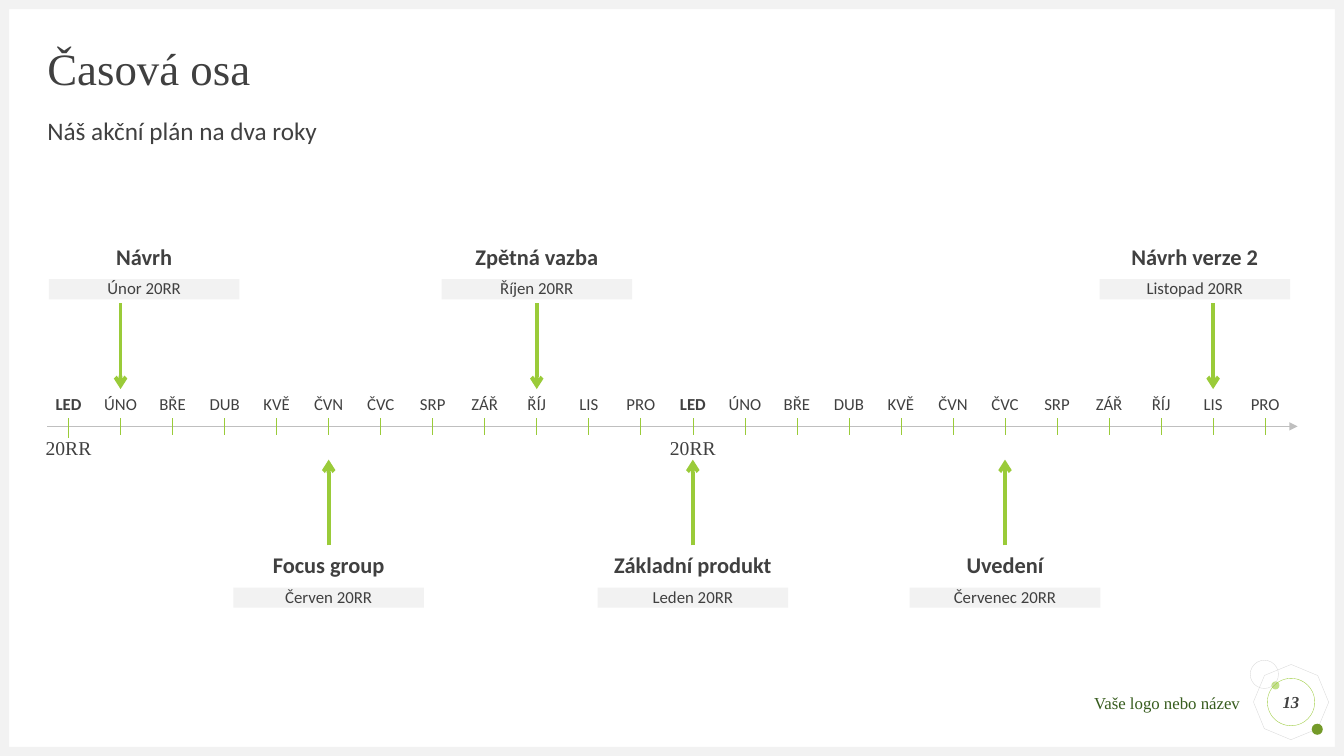
from pptx import Presentation
from pptx.dml.color import RGBColor
from pptx.enum.shapes import MSO_CONNECTOR, MSO_SHAPE
from pptx.enum.text import MSO_ANCHOR, PP_ALIGN
from pptx.oxml.ns import qn
from pptx.util import Inches, Pt
from lxml import etree

HEADING = "Časová osa"
SUBTITLE = "Náš akční plán na dva roky"
FOOTER = "Vaše logo nebo název"
PAGE_NUMBER = "13"
YEARS = ["20RR", "20RR"]
MONTHS = ["LED", "ÚNO", "BŘE", "DUB", "KVĚ", "ČVN",
          "ČVC", "SRP", "ZÁŘ", "ŘÍJ", "LIS", "PRO"]
# month index counted from the first January
MILESTONES = [
    (1, "Návrh", "Únor 20RR", "above"),
    (5, "Focus group", "Červen 20RR", "below"),
    (9, "Zpětná vazba", "Říjen 20RR", "above"),
    (12, "Základní produkt", "Leden 20RR", "below"),
    (18, "Uvedení", "Červenec 20RR", "below"),
    (22, "Návrh verze 2", "Listopad 20RR", "above"),
]
THEME = {
    "text": "404040", "footer": "375C1E", "accent": "9ACB39",
    "accent_light": "C2E088", "accent_dark": "749A29",
    "band": "F2F2F2", "outline": "D9D9D9", "axis": "BFBFBF",
    "serif": "Times New Roman", "sans": "Calibri",
    "heading": 32, "subtitle": 18, "milestone": 16, "year": 14, "small": 12,
}
SLIDE_W, SLIDE_H = 13.33, 7.5
BORDER = 0.09
MARGIN_LEFT, MARGIN_RIGHT = 0.47, 12.87
CONTENT_W = MARGIN_RIGHT - MARGIN_LEFT
AXIS_Y, TICK_TOP = 4.23, 4.15
FIRST_TICK, MONTH_STEP = 0.68, 0.516
MONTH_W, YEAR_W, NAME_W, DATE_W = 0.55, 0.6, 1.96, 1.89
FIRST_CENTER, LAST_CENTER = 1.43, 11.85
SIDES = {
    "above": {"name_top": 2.4, "arrow": (3.01, 3.86)},
    "below": {"name_top": 5.46, "arrow": (5.41, 4.56)},
}
DATE_OFFSET = 0.37


def color(name):
    return RGBColor.from_string(THEME[name])


def write(shape, text, size, font="sans", ink="text", align=PP_ALIGN.CENTER,
          anchor=MSO_ANCHOR.TOP, bold=False, italic=False, inset_top=0, spacing=0.9):
    frame = shape.text_frame
    frame.word_wrap = True
    frame.vertical_anchor = anchor
    frame.margin_left = frame.margin_right = frame.margin_bottom = 0
    frame.margin_top = Inches(inset_top)
    frame.text = text
    paragraph = frame.paragraphs[0]
    paragraph.alignment = align
    paragraph.line_spacing = spacing
    run_font = paragraph.runs[0].font
    run_font.name = THEME[font]
    run_font.size = Pt(THEME[size])
    run_font.bold = bold
    run_font.italic = italic
    run_font.color.rgb = color(ink)


def add_text(slide, at, text, size, **style):
    box = slide.shapes.add_textbox(*map(Inches, at))
    write(box, text, size, **style)


def add_figure(slide, kind, at, fill=None, line=None):
    figure = slide.shapes.add_shape(kind, *map(Inches, at))
    figure.shadow.inherit = False
    if fill:
        figure.fill.solid()
        figure.fill.fore_color.rgb = color(fill)
    else:
        figure.fill.background()
    if line:
        figure.line.color.rgb = color(line)
        figure.line.width = Pt(0.25)
    else:
        figure.line.fill.background()
    return figure


def add_line(slide, start, end, ink, width, head=None):
    line = slide.shapes.add_connector(
        MSO_CONNECTOR.STRAIGHT, *map(Inches, start + end))
    line.line.color.rgb = color(ink)
    line.line.width = Pt(width)
    if head:
        etree.SubElement(line.line._get_or_add_ln(), qn("a:tailEnd"), type=head)
    etree.SubElement(line._element.spPr, qn("a:effectLst"))


def tick_x(month):
    return FIRST_TICK + month * MONTH_STEP


def add_frame(slide):
    octagon = add_figure(slide, MSO_SHAPE.OCTAGON, (12.46, 6.62, 0.69, 0.69), line="outline")
    octagon.rotation = 22.7
    add_figure(slide, MSO_SHAPE.OVAL, (12.61, 6.76, 0.08, 0.08), fill="accent_light")
    add_figure(slide, MSO_SHAPE.OVAL, (13.01, 7.18, 0.11, 0.11), fill="accent_dark")
    add_figure(slide, MSO_SHAPE.OVAL, (12.4, 6.55, 0.28, 0.28), line="outline")
    for edge in [(0, SLIDE_H - BORDER, SLIDE_W, BORDER), (0, 0, SLIDE_W, BORDER),
                 (0, 0, BORDER, SLIDE_H), (SLIDE_W - BORDER, 0, BORDER, SLIDE_H)]:
        add_figure(slide, MSO_SHAPE.RECTANGLE, edge, fill="band")
    add_text(slide, (9.55, 6.87, 2.75, 0.2), FOOTER, "small", font="serif",
             ink="footer", align=PP_ALIGN.RIGHT, spacing=1.0)
    badge = add_figure(slide, MSO_SHAPE.OVAL, (12.57, 6.73, 0.47, 0.47), line="accent")
    write(badge, PAGE_NUMBER, "small", font="serif", anchor=MSO_ANCHOR.MIDDLE,
          bold=True, italic=True, spacing=1.0)


def add_axis(slide):
    add_line(slide, (MARGIN_LEFT, AXIS_Y), (MARGIN_RIGHT, AXIS_Y), "axis", 0.5, "triangle")
    for index, month in enumerate(MONTHS * len(YEARS)):
        x = tick_x(index)
        year, month_of_year = divmod(index, len(MONTHS))
        add_text(slide, (x - MONTH_W / 2, 3.93, MONTH_W, 0.22), month, "small",
                 bold=month_of_year == 0)
        tick_bottom = 4.35 if index == 0 else 4.32
        add_line(slide, (x, TICK_TOP), (x, tick_bottom), "accent", 0.25 if year else 0.5)
        if month_of_year == 0:
            add_text(slide, (x - YEAR_W / 2, 4.35, YEAR_W, 0.22), YEARS[year], "year",
                     font="serif", anchor=MSO_ANCHOR.MIDDLE)


def add_milestone(slide, month, name, date, side):
    x = tick_x(month)
    center = min(max(x, FIRST_CENTER), LAST_CENTER)
    name_top = SIDES[side]["name_top"]
    arrow_start, arrow_end = SIDES[side]["arrow"]
    add_text(slide, (center - NAME_W / 2, name_top, NAME_W, 0.61), name, "milestone",
             bold=True, inset_top=0.04)
    date_band = add_figure(slide, MSO_SHAPE.RECTANGLE,
                           (center - DATE_W / 2, name_top + DATE_OFFSET, DATE_W, 0.2),
                           fill="band")
    write(date_band, date, "small", anchor=MSO_ANCHOR.MIDDLE)
    add_line(slide, (x, arrow_start), (x, arrow_end), "accent", 2.75, "arrow")


def main():
    deck = Presentation()
    deck.slide_width, deck.slide_height = Inches(SLIDE_W), Inches(SLIDE_H)
    slide = deck.slides.add_slide(deck.slide_layouts[6])
    add_frame(slide)
    add_text(slide, (MARGIN_LEFT, 0.47, CONTENT_W, 0.47), HEADING, "heading",
             font="serif", align=PP_ALIGN.LEFT, anchor=MSO_ANCHOR.MIDDLE)
    add_text(slide, (MARGIN_LEFT, 1.18, CONTENT_W, 0.3), SUBTITLE, "subtitle",
             align=PP_ALIGN.LEFT)
    add_axis(slide)
    for milestone in MILESTONES:
        add_milestone(slide, *milestone)
    deck.save("out.pptx")


if __name__ == "__main__":
    main()
